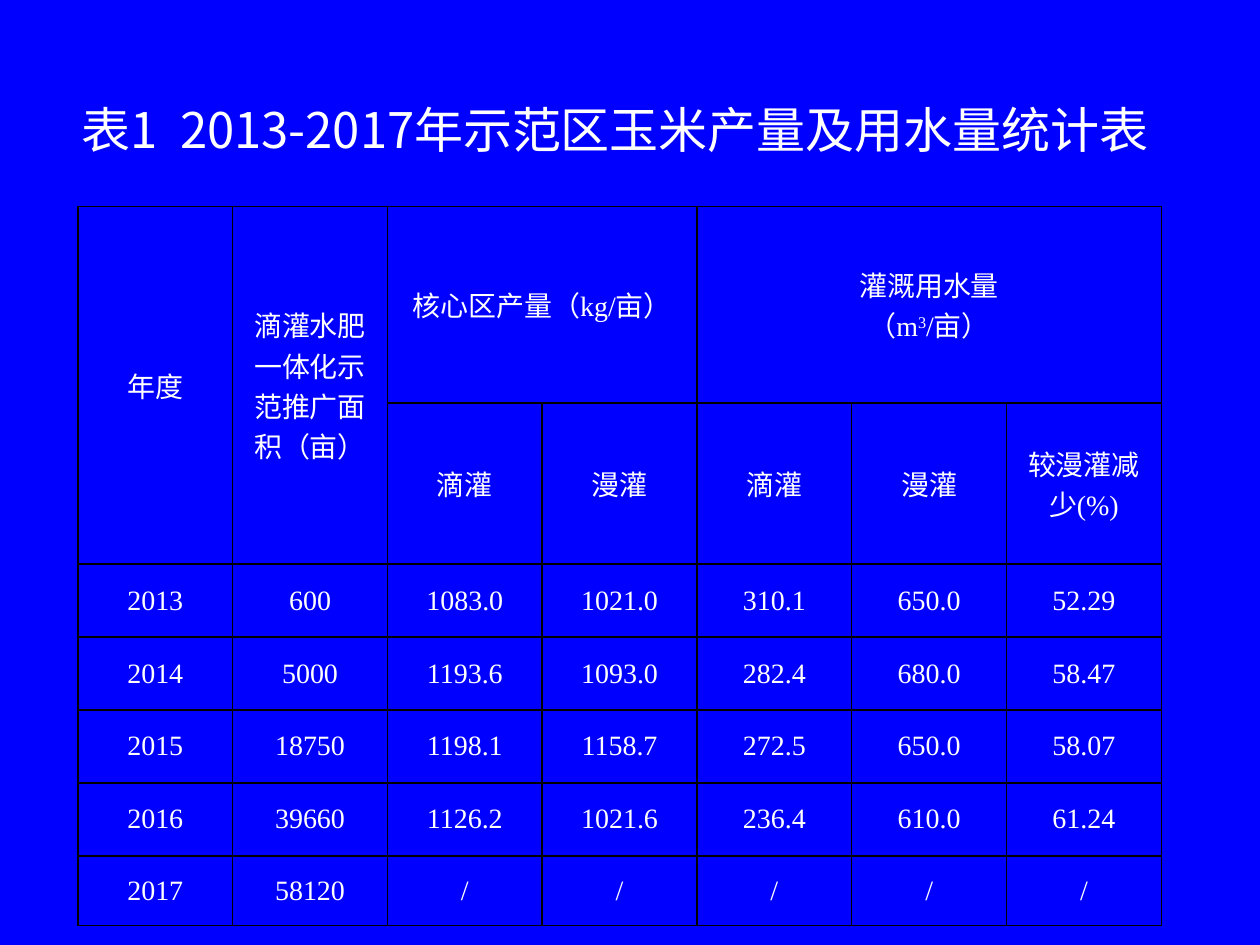
from lxml import etree
from pptx import Presentation
from pptx import util as u
from pptx.dml.color import RGBColor
from pptx.enum import text
from pptx.oxml import ns

BLUE = RGBColor(0x00, 0x00, 0xFF)
WHITE = RGBColor(0xFF, 0xFF, 0xFF)
LINE = "000000"
SANS, SERIF = "Noto Sans CJK SC", "Times New Roman"

# Content: a cell is a string, or a list of (string, baseline) runs
TITLE = "表1  2013-2017年示范区玉米产量及用水量统计表"
WATER = [("灌溉用水量\n（m", 0), ("3", 30000), ("/亩）", 0)]
ROWS = [
    ("年度", "滴灌水肥一体化示范推广面积（亩）", "核心区产量（kg/亩）", "", WATER, "", ""),
    ("", "", "滴灌", "漫灌", "滴灌", "漫灌", "较漫灌减少(%)"),
    ("2013", "600", "1083.0", "1021.0", "310.1", "650.0", "52.29"),
    ("2014", "5000", "1193.6", "1093.0", "282.4", "680.0", "58.47"),
    ("2015", "18750", "1198.1", "1158.7", "272.5", "650.0", "58.07"),
    ("2016", "39660", "1126.2", "1021.6", "236.4", "610.0", "61.24"),
    ("2017", "58120", "/", "/", "/", "/", "/"),
]
SPANS = [((0, 0), (1, 0)), ((0, 1), (1, 1)), ((0, 2), (0, 3)), ((0, 4), (0, 6))]
HIGH = [3.96, 2.67] + [1.47] * 4 + [1.4]
WIDE = 3.12


def write(frame, runs, size=16, font=SERIF, space=None):
    """Put centred white text into a text frame."""
    para = frame.paragraphs[0]
    para.alignment = text.PP_ALIGN.CENTER
    if space:
        para.line_spacing = space
    if isinstance(runs, str):
        runs = [(runs, 0)]
    for words, base in runs:
        for i, part in enumerate(words.split("\n")):
            if i:
                para.add_line_break()
            run = para.add_run()
            run.text = part
            run.font.size = u.Pt(size)
            run.font.name = font
            run.font.color.rgb = WHITE
            props = run.font._element
            etree.SubElement(props, ns.qn("a:ea"), typeface=SANS)
            if base:
                props.set("baseline", str(base))


def frame_cell(cell):
    """Draw thin black borders, which come before the fill in the XML."""
    props = cell._tc.get_or_add_tcPr()
    for i, side in enumerate(("lnL", "lnR", "lnT", "lnB")):
        line = etree.Element(ns.qn("a:" + side), w=str(u.Pt(1)))
        fill = etree.SubElement(line, ns.qn("a:solidFill"))
        etree.SubElement(fill, ns.qn("a:srgbClr"), val=LINE)
        props.insert(i, line)


deck = Presentation()
deck.slide_width, deck.slide_height = u.Cm(25.4), u.Cm(19.05)
slide = deck.slides.add_slide(deck.slide_layouts[6])
slide.background.fill.solid()
slide.background.fill.fore_color.rgb = BLUE

# Table
grid = slide.shapes.add_table(
    len(ROWS), len(ROWS[0]), u.Cm(1.57), u.Cm(4.16),
    u.Cm(WIDE * len(ROWS[0])), u.Cm(sum(HIGH))).table
grid.first_row = grid.horz_banding = False
for col in grid.columns:
    col.width = u.Cm(WIDE)
for row, high in zip(grid.rows, HIGH):
    row.height = u.Cm(high)
for first, last in SPANS:
    grid.cell(*first).merge(grid.cell(*last))
for r, row in enumerate(ROWS):
    for c, words in enumerate(row):
        cell = grid.cell(r, c)
        cell.fill.solid()
        cell.fill.fore_color.rgb = BLUE
        cell.vertical_anchor = text.MSO_ANCHOR.MIDDLE
        cell.margin_left = cell.margin_right = u.Cm(0.18)
        cell.margin_top = cell.margin_bottom = 0
        frame_cell(cell)
        if words:
            write(cell.text_frame, words)

# Title
head = slide.shapes.add_textbox(u.Cm(1.25), u.Cm(1.98), u.Cm(22.3), u.Cm(1.45))
head.text_frame.word_wrap = True
head.text_frame.vertical_anchor = text.MSO_ANCHOR.MIDDLE
write(head.text_frame, TITLE, size=28, font=SANS, space=0.8)

deck.save("out.pptx")
